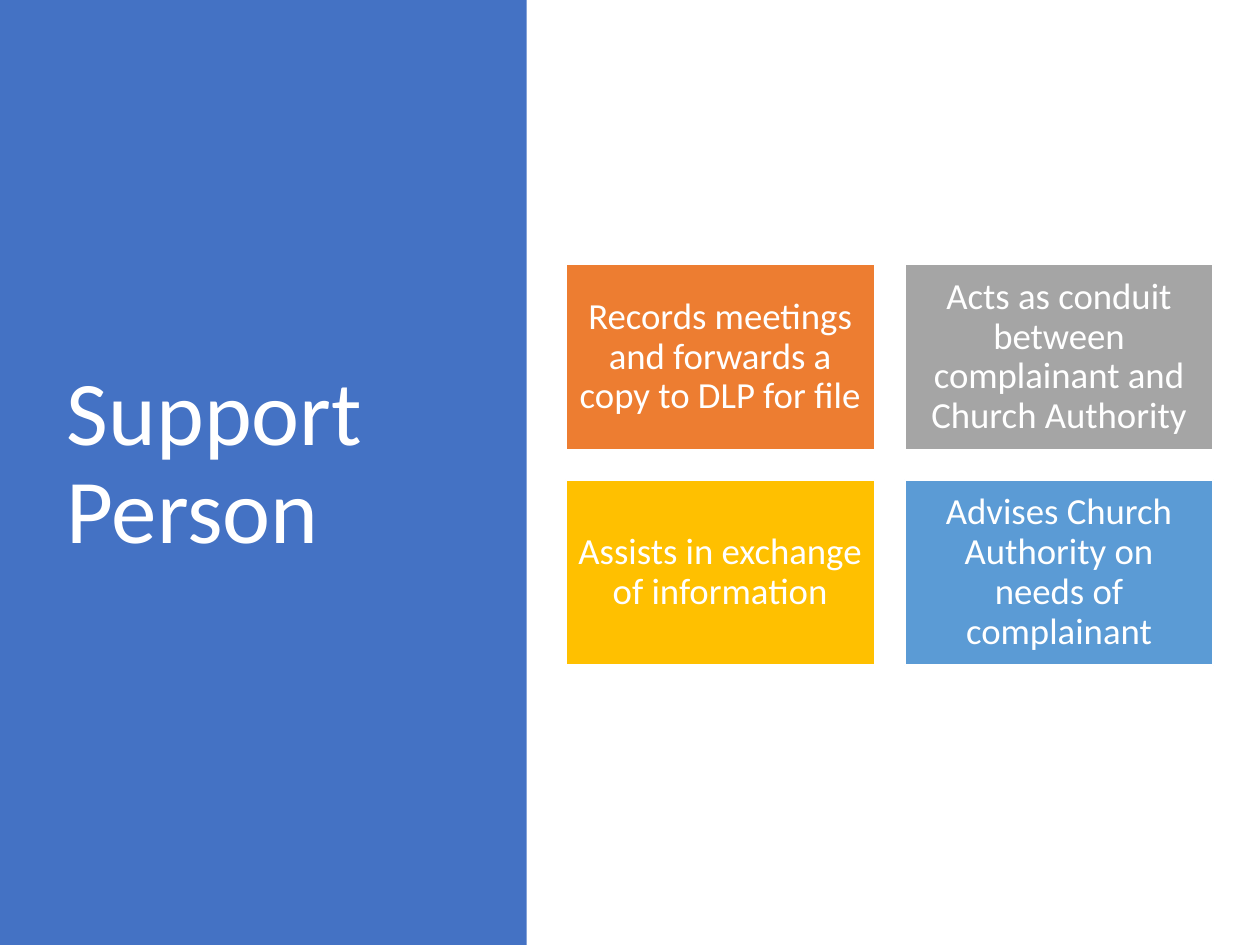
from pptx import Presentation
from pptx.dml.color import RGBColor
from pptx.enum.shapes import MSO_SHAPE
from pptx.enum.text import MSO_ANCHOR, MSO_AUTO_SIZE, PP_ALIGN
from pptx.util import Inches, Pt

RECTANGLE = MSO_SHAPE.RECTANGLE
MIDDLE = MSO_ANCHOR.MIDDLE
NO_AUTOFIT = MSO_AUTO_SIZE.NONE
LEFT, CENTER = PP_ALIGN.LEFT, PP_ALIGN.CENTER

WHITE = RGBColor(0xFF, 0xFF, 0xFF)
BLUE = RGBColor(0x44, 0x72, 0xC4)
ORANGE = RGBColor(0xED, 0x7D, 0x31)
GRAY = RGBColor(0xA5, 0xA5, 0xA5)
GOLD = RGBColor(0xFF, 0xC0, 0x00)
LIGHT_BLUE = RGBColor(0x5B, 0x9B, 0xD5)

FONT = "Calibri"
TITLE_ONLY = 5
DUTIES = [
    ("Records meetings and forwards a copy to DLP for file", ORANGE),
    ("Acts as conduit between complainant and Church Authority", GRAY),
    ("Assists in exchange of information", GOLD),
    ("Advises Church Authority on needs of complainant", LIGHT_BLUE),
]


def write_text(shape, text, size, alignment):
    """Write one white paragraph, centred vertically in the shape."""
    frame = shape.text_frame
    frame.word_wrap = True
    frame.auto_size = NO_AUTOFIT
    frame.vertical_anchor = MIDDLE
    para = frame.paragraphs[0]
    para.alignment = alignment
    para.line_spacing = 0.9
    span = para.add_run()
    span.text = text
    span.font.size = Pt(size)
    span.font.name = FONT
    span.font.color.rgb = WHITE


def add_rectangle(page, left, top, width, height, color):
    """Add a plain filled rectangle, measured in inches."""
    box = page.shapes.add_shape(
        RECTANGLE, Inches(left), Inches(top), Inches(width), Inches(height))
    box.shadow.inherit = False
    box.fill.solid()
    box.fill.fore_color.rgb = color
    box.line.fill.background()
    return box


def add_title_panel(page, left, top, width, height):
    """Place the coloured side panel with the slide title over it."""
    panel = add_rectangle(page, left, top, width, height, BLUE)
    title = page.shapes.title
    title.element.addprevious(panel.element)
    title.left, title.top = Inches(left + 0.43), Inches(top + 0.68)
    title.width, title.height = Inches(3.12), Inches(6.02)
    write_text(title, "Support Person", 52, LEFT)


def add_duty_grid(page, left, top, width, height, columns=2, gap=0.24):
    """Fill the given area with evenly spaced duty cards."""
    rows = len(DUTIES) // columns
    card_width = (width - gap * (columns - 1)) / columns
    card_height = (height - gap * (rows - 1)) / rows
    for index, (text, color) in enumerate(DUTIES):
        row, column = divmod(index, columns)
        card = add_rectangle(
            page, left + column * (card_width + gap),
            top + row * (card_height + gap), card_width, card_height, color)
        card.line.color.rgb = WHITE
        card.line.width = Pt(1)
        frame = card.text_frame
        frame.margin_left = frame.margin_right = Inches(0.09)
        frame.margin_top = frame.margin_bottom = Inches(0.09)
        write_text(card, text, 21, CENTER)


def main():
    """Build and save the deck."""
    deck = Presentation()
    deck.slide_width, deck.slide_height = Inches(10), Inches(7.5)
    page = deck.slides.add_slide(deck.slide_layouts[TITLE_ONLY])
    add_title_panel(page, 0, 0, 4.18, 7.5)
    add_duty_grid(page, 4.49, 2.1, 5.14, 3.18)
    deck.save("out.pptx")


if __name__ == "__main__":
    main()
